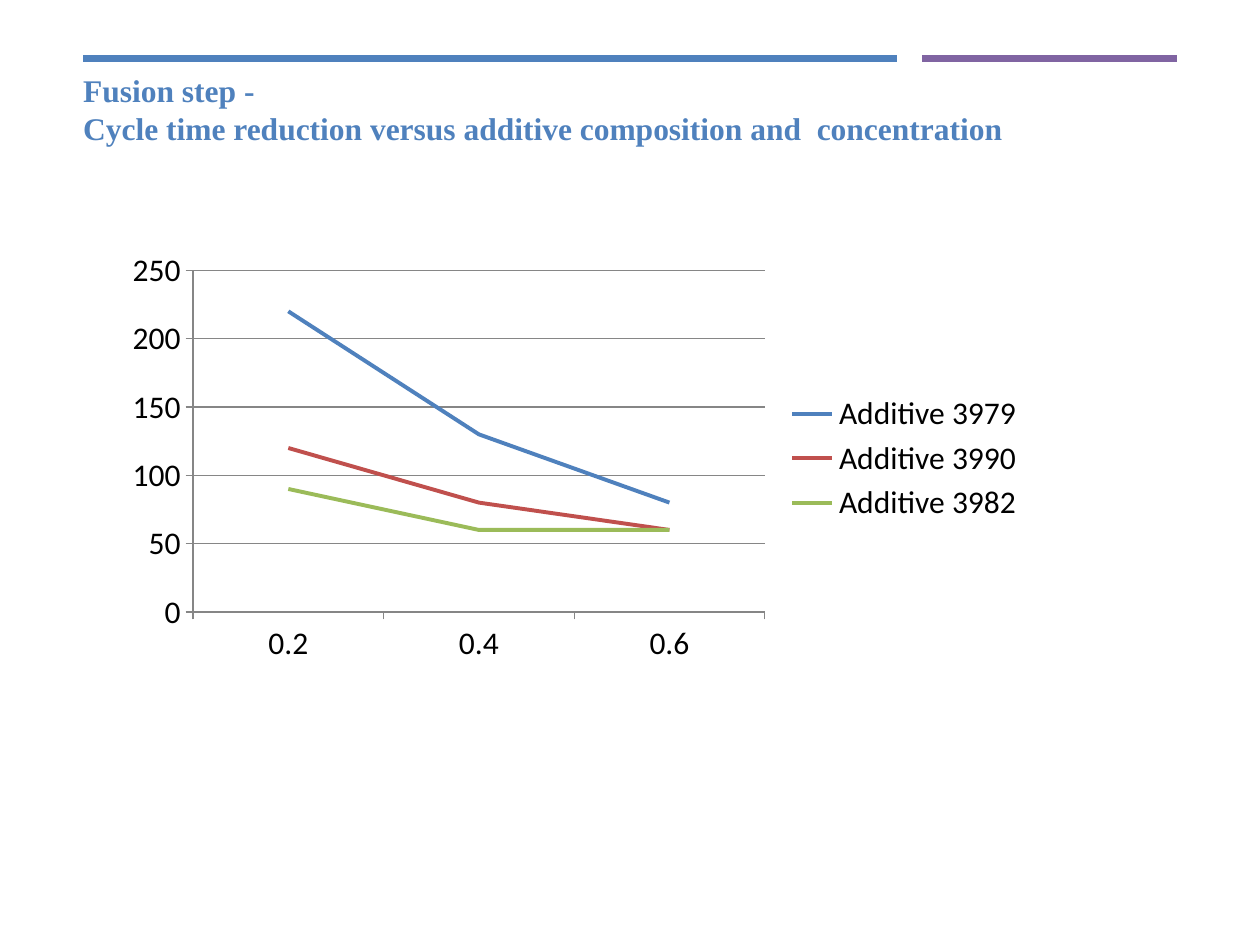
"""Build a slide with a line chart of cycle time against additive concentration."""
from dataclasses import dataclass

import lxml.etree
import pptx
import pptx.chart.data
import pptx.dml.color
import pptx.enum.chart
import pptx.enum.shapes
import pptx.enum.text
import pptx.oxml
import pptx.oxml.ns
import pptx.util

WIDTH, HEIGHT = pptx.util.Inches(10), pptx.util.Inches(7.5)
MARGIN = 0.066
BLUE, RED, GREEN, PURPLE, GREY = "4F81BD", "C0504D", "9BBB59", "8064A2", "868686"
CONCENTRATIONS = ("0.2", "0.4", "0.6")
TITLE_LINES = (
    "Fusion step -",
    "Cycle time reduction versus additive composition and  concentration",
)


@dataclass(frozen=True)
class Rule:
    """A horizontal rule, from start to end as shares of the slide width."""

    start: float
    end: float
    color: str


@dataclass(frozen=True)
class Additive:
    """One additive with its cycle times."""

    name: str
    times: tuple[int, ...]
    color: str


RULES = (Rule(MARGIN, 0.712, BLUE), Rule(0.732, 1 - MARGIN, PURPLE))
ADDITIVES = (
    Additive("Additive 3979", (220, 130, 80), BLUE),
    Additive("Additive 3990", (120, 80, 60), RED),
    Additive("Additive 3982", (90, 60, 60), GREEN),
)


def rgb(color: str) -> pptx.dml.color.RGBColor:
    """Turn a hex string into a colour."""
    return pptx.dml.color.RGBColor.from_string(color)


def area(left: float, top: float, width: float, height: float) -> tuple[int, ...]:
    """Turn shares of the slide into lengths."""
    return tuple(
        round(share * size)
        for share, size in zip((left, top, width, height), (WIDTH, HEIGHT) * 2)
    )


def apply(target, values: dict) -> None:
    """Set attributes from a dict of format values."""
    for name, value in values.items():
        setattr(target, name, value)


def style_line(line, color: str, points: float) -> None:
    """Give a line its colour and width."""
    line.color.rgb = rgb(color)
    line.width = pptx.util.Pt(points)


def style_font(font, color: str, name: str, bold: bool) -> None:
    """Give text its typeface, weight and colour at the common size."""
    apply(font, {"name": name, "size": pptx.util.Pt(18), "bold": bold})
    font.color.rgb = rgb(color)


def draw_rule(page, rule: Rule) -> None:
    """Draw one rule above the title."""
    start, level, end, _ = area(rule.start, 0.0617, rule.end, 0)
    line = page.shapes.add_connector(
        pptx.enum.shapes.MSO_CONNECTOR.STRAIGHT, start, level, end, level
    )
    style_line(line.line, rule.color, 4)
    lxml.etree.SubElement(
        line._element.spPr, pptx.oxml.ns.qn("a:effectLst")
    )


def write_title(page) -> None:
    """Place and fill the title placeholder."""
    title = page.shapes.title
    places = area(MARGIN, 0.075, 0.749, 0.135)
    apply(title, dict(zip(("left", "top", "width", "height"), places)))
    frame = title.text_frame
    apply(frame, {f"margin_{side}": 0 for side in ("left", "top", "right", "bottom")})
    apply(frame, {
        "word_wrap": True,
        "auto_size": pptx.enum.text.MSO_AUTO_SIZE.NONE,
        "vertical_anchor": pptx.enum.text.MSO_ANCHOR.TOP,
    })
    para = frame.paragraphs[0]
    para.alignment = pptx.enum.text.PP_ALIGN.LEFT
    for number, words in enumerate(TITLE_LINES):
        if number:
            para.add_line_break()
        span = para.add_run()
        span.text = words
        style_font(span.font, BLUE, "Times New Roman", True)


def fix_plot_area(chart, left: float, top: float, width: float, height: float) -> None:
    """Fix the inner plot area by shares of the chart."""
    plot_area = chart._chartSpace.chart.plotArea
    for old in plot_area.findall(pptx.oxml.ns.qn("c:layout")):
        plot_area.remove(old)
    settings = {
        "layoutTarget": "inner", "xMode": "edge", "yMode": "edge",
        "x": left, "y": top, "w": width, "h": height,
    }
    parts = "".join(f'<c:{name} val="{value}"/>' for name, value in settings.items())
    plot_area.insert(0, pptx.oxml.parse_xml(
        f'<c:layout {pptx.oxml.ns.nsdecls("c")}>'
        f"<c:manualLayout>{parts}</c:manualLayout></c:layout>"
    ))


def draw_chart(page) -> None:
    """Draw the line chart with its axes and legend."""
    data = pptx.chart.data.CategoryChartData()
    data.categories = CONCENTRATIONS
    for additive in ADDITIVES:
        data.add_series(additive.name, additive.times)
    chart = page.shapes.add_chart(
        pptx.enum.chart.XL_CHART_TYPE.LINE, *area(0.091, 0.259, 0.732, 0.452), data
    ).chart
    style_font(chart.font, "000000", "Calibri", False)
    apply(chart, {"has_title": False, "has_legend": True})
    apply(chart.legend, {
        "position": pptx.enum.chart.XL_LEGEND_POSITION.RIGHT,
        "include_in_layout": False,
    })
    chart.plots[0].vary_by_categories = False
    for series, additive in zip(chart.plots[0].series, ADDITIVES):
        series.smooth = False
        series.marker.style = pptx.enum.chart.XL_MARKER_STYLE.NONE
        style_line(series.format.line, additive.color, 2.25)
    for axis in (chart.category_axis, chart.value_axis):
        axis.major_tick_mark = pptx.enum.chart.XL_TICK_MARK.OUTSIDE
        style_line(axis.format.line, GREY, 0.75)
    apply(chart.value_axis, {
        "minimum_scale": 0, "maximum_scale": 250, "major_unit": 50,
        "has_major_gridlines": True,
    })
    style_line(chart.value_axis.major_gridlines.format.line, GREY, 0.75)
    fix_plot_area(chart, 0.085, 0.06, 0.62, 0.8)


def main() -> None:
    """Build and save the deck."""
    deck = pptx.Presentation()
    apply(deck, {"slide_width": WIDTH, "slide_height": HEIGHT})
    page = deck.slides.add_slide(deck.slide_layouts[5])
    for rule in RULES:
        draw_rule(page, rule)
    write_title(page)
    draw_chart(page)
    deck.save("out.pptx")


if __name__ == "__main__":
    main()
